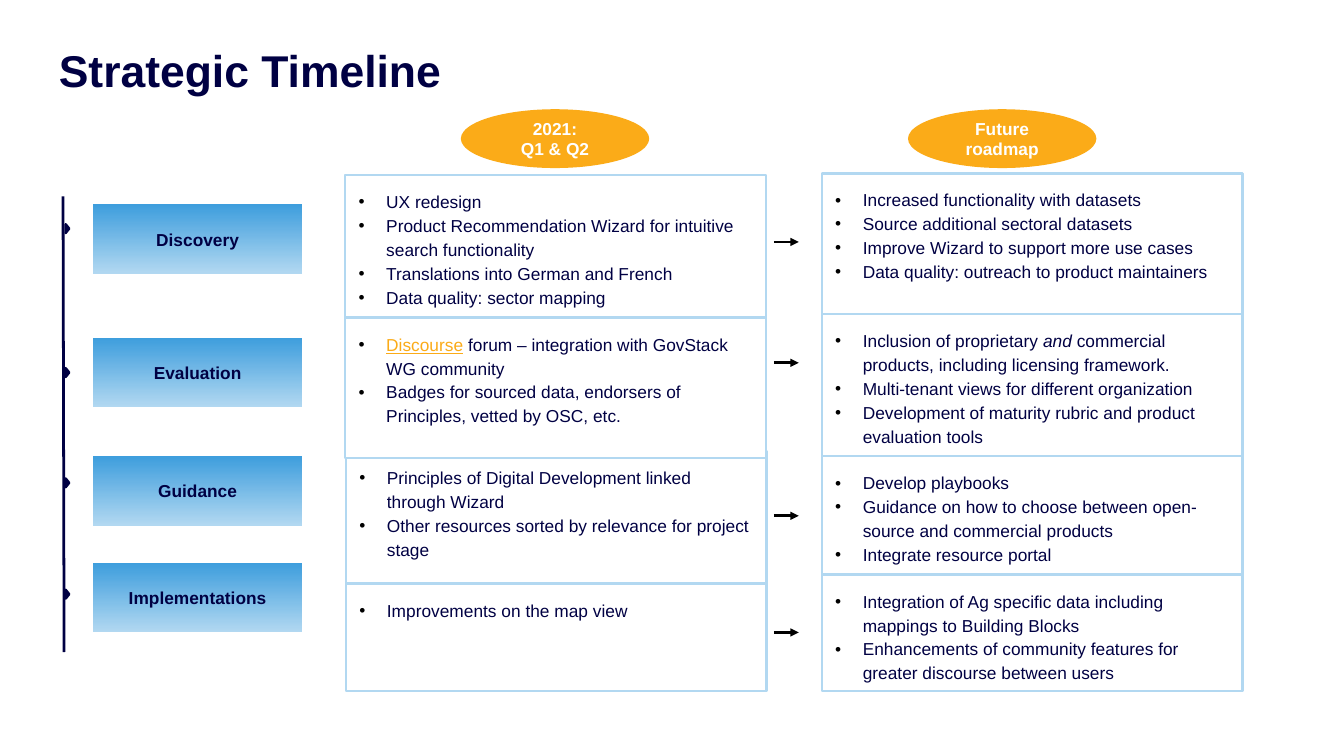
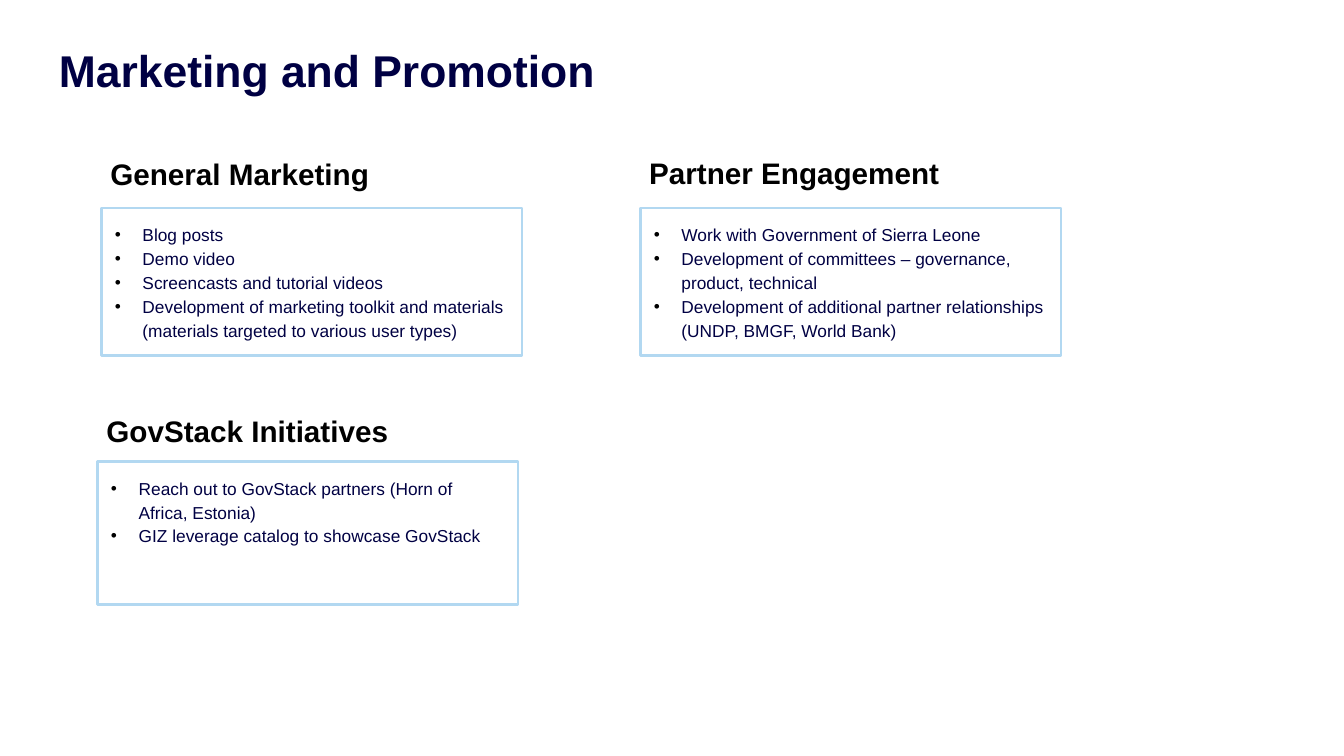
import lxml.etree
import pptx
import pptx.dml.color
import pptx.enum.shapes
import pptx.enum.text
import pptx.oxml.ns
import pptx.util

Cm = pptx.util.Cm
Pt = pptx.util.Pt
SHAPE = pptx.enum.shapes.MSO_SHAPE
ALIGN = pptx.enum.text.PP_ALIGN
ANCHOR = pptx.enum.text.MSO_ANCHOR
qn = pptx.oxml.ns.qn

COLOURS = {
    "navy": "000043",
    "black": "000000",
    "white": "FFFFFF",
    "orange": "FBAB18",
    "blue": "3E9EDD",
    "pale": "B2D8F1",
}
FONT = "Arial"
PANEL_WIDTH = 12.01
STAGE_LEFT, STAGE_WIDTH, STAGE_HEIGHT = 2.65, 5.99, 1.98
RAIL_LEFT, RAIL_TOP, RAIL_HEIGHT = 1.8, 5.61, 13.01
ARROW_LEFT, ARROW_LENGTH = 22.1, 0.71
OVAL_TOP, OVAL_WIDTH, OVAL_HEIGHT = 3.12, 5.38, 1.68

STAGES = [
    ("Discovery", 5.84),
    ("Evaluation", 9.65),
    ("Guidance", 13.03),
    ("Implementations", 16.08),
]
MARKER_TOPS = [6.48, 10.59, 13.74, 16.92]
ARROW_TOPS = [6.91, 10.36, 14.73, 18.06]

CURRENT_PANELS = [
    (9.86, 5, 4.22, [
        "UX redesign",
        "Product Recommendation Wizard for intuitive search functionality",
        "Translations into German and French",
        "Data quality: sector mapping",
    ]),
    (9.88, 12.88, 4.01, [
        "Principles of Digital Development linked through Wizard",
        "Other resources sorted by relevance for project stage",
    ]),
    (9.86, 9.07, 4.01, [
        [("Discourse", "link"), (" forum – integration with GovStack WG community", "plain")],
        "Badges for sourced data, endorsers of Principles, vetted by OSC, etc.",
    ]),
    (9.88, 16.66, 3.07, ["Improvements on the map view"]),
]
FUTURE_PANELS = [
    (23.47, 4.95, 4.09, [
        "Increased functionality with datasets",
        "Source additional sectoral datasets",
        "Improve Wizard to support more use cases",
        "Data quality: outreach to product maintainers",
    ]),
    (23.47, 8.97, 4.06, [
        [
            ("Inclusion of proprietary ", "plain"),
            ("and ", "italic"),
            ("commercial products, including licensing framework.", "plain"),
        ],
        "Multi-tenant views for different organization",
        "Development of maturity rubric and product evaluation tools",
    ]),
    (23.47, 13.03, 3.38, [
        "Develop playbooks",
        "Guidance on how to choose between open-source and commercial products",
        "Integrate resource portal",
    ]),
    (23.47, 16.41, 3.33, [
        "Integration of Ag specific data including mappings to Building Blocks",
        "Enhancements of community features for greater discourse between users",
    ]),
]
PERIODS = [
    ("2021:\vQ1 & Q2", 13.16, CURRENT_PANELS),
    ("Future\vroadmap", 25.93, FUTURE_PANELS),
]
CAMPAIGNS = [
    ("General Marketing", 2.9, 4.32, 1.62, 4.22, [
        "Blog posts",
        "Demo video",
        "Screencasts and tutorial videos",
        "Development of marketing toolkit and materials (materials targeted to various user types)",
    ]),
    ("GovStack Initiatives", 2.79, 11.68, 1.5, 4.09, [
        "Reach out to GovStack partners (Horn of Africa, Estonia)",
        "GIZ leverage catalog to showcase GovStack",
    ]),
    ("Partner Engagement", 18.29, 4.29, 1.65, 4.22, [
        "Work with Government of Sierra Leone",
        "Development of committees – governance, product, technical",
        "Development of additional partner relationships (UNDP, BMGF, World Bank)",
    ]),
]


def colour(name):
    return pptx.dml.color.RGBColor.from_string(COLOURS[name])


def style_para(para, size, ink, bold=False):
    para.font.name = FONT
    para.font.size = Pt(size)
    para.font.bold = bold
    para.font.color.rgb = colour(ink)


def set_insets(frame, inset):
    frame.margin_left = frame.margin_right = Cm(inset)
    frame.margin_top = frame.margin_bottom = Cm(inset)


def add_box(page, kind, left, top, width, height, fill=None, line=None):
    box = page.shapes.add_shape(kind, Cm(left), Cm(top), Cm(width), Cm(height))
    box.shadow.inherit = False
    if fill:
        box.fill.solid()
        box.fill.fore_color.rgb = colour(fill)
    if line:
        box.line.color.rgb = colour(line)
        box.line.width = Pt(2)
    else:
        box.line.fill.background()
    return box


def add_label(box, text, ink):
    frame = box.text_frame
    frame.word_wrap = True
    frame.vertical_anchor = ANCHOR.MIDDLE
    para = frame.paragraphs[0]
    para.text = text
    para.alignment = ALIGN.CENTER
    style_para(para, 14, ink, bold=True)


def add_line(page, left, top, right, bottom, ink):
    line = page.shapes.add_connector(
        pptx.enum.shapes.MSO_CONNECTOR.STRAIGHT, Cm(left), Cm(top), Cm(right), Cm(bottom)
    )
    line.line.color.rgb = colour(ink)
    line.line.width = Pt(2.25)
    lxml.etree.SubElement(line._element.spPr, qn("a:effectLst"))
    return line


def add_arrow(page, left, top, length):
    arrow = add_line(page, left, top, left + length, top, "black")
    lxml.etree.SubElement(arrow.line._get_or_add_ln(), qn("a:tailEnd"), type="triangle")


def add_bullet(para):
    properties = para._p.get_or_add_pPr()
    properties.set("marL", str(Cm(0.79)))
    properties.set("indent", str(-Cm(0.79)))
    bullet_colour = lxml.etree.SubElement(properties, qn("a:buClr"))
    lxml.etree.SubElement(bullet_colour, qn("a:srgbClr"), val=COLOURS["black"])
    lxml.etree.SubElement(properties, qn("a:buFont"), typeface=FONT)
    lxml.etree.SubElement(properties, qn("a:buChar"), char="•")


def add_spans(para, item):
    spans = [(item, "plain")] if isinstance(item, str) else item
    for text, look in spans:
        span = para.add_run()
        span.text = text
        if look == "italic":
            span.font.italic = True
        elif look == "link":
            span.font.underline = True
            span.font.color.rgb = colour("orange")


def add_panel(page, left, top, height, items):
    box = add_box(page, SHAPE.RECTANGLE, left, top, PANEL_WIDTH, height, "white", "pale")
    frame = box.text_frame
    frame.word_wrap = True
    frame.vertical_anchor = ANCHOR.TOP
    set_insets(frame, 0.38)
    for index, item in enumerate(items):
        para = frame.add_paragraph() if index else frame.paragraphs[0]
        para.alignment = ALIGN.LEFT
        para.line_spacing = 1.15
        add_bullet(para)
        style_para(para, 14, "navy")
        add_spans(para, item)


def add_rail(page, left, top, height):
    add_line(page, left, top, left + 0.03, top + height, "navy")
    for marker_top in MARKER_TOPS:
        marker = add_box(
            page, SHAPE.ISOSCELES_TRIANGLE, left, marker_top, 0.25, 0.1, "navy", "navy"
        )
        marker.rotation = 90


def add_stage(page, name, left, top):
    box = add_box(page, SHAPE.RECTANGLE, left, top, STAGE_WIDTH, STAGE_HEIGHT)
    box.fill.gradient()
    box.fill.gradient_angle = 270
    for stop, position, ink in zip(box.fill.gradient_stops, (0, 1), ("blue", "pale")):
        stop.position = position
        stop.color.rgb = colour(ink)
    add_label(box, name, "navy")


def add_period(page, name, left, panels):
    for panel in panels:
        add_panel(page, *panel)
    oval = add_box(page, SHAPE.OVAL, left, OVAL_TOP, OVAL_WIDTH, OVAL_HEIGHT, "orange")
    add_label(oval, name, "white")


def add_campaign(page, name, left, top, drop, height, items):
    heading = page.shapes.add_textbox(Cm(left), Cm(top), Cm(8.8), Cm(1.27))
    heading.text_frame.word_wrap = False
    para = heading.text_frame.paragraphs[0]
    para.text = name
    para.alignment = ALIGN.LEFT
    style_para(para, 24, "black", bold=True)
    add_panel(page, left, top + drop, height, items)


def add_page(deck, heading):
    page = deck.slides.add_slide(deck.slide_layouts[5])
    title = page.shapes.title
    title.left, title.top, title.width, title.height = Cm(1.68), Cm(1.14), Cm(34.9), Cm(1.98)
    frame = title.text_frame
    frame.word_wrap = True
    frame.vertical_anchor = ANCHOR.TOP
    set_insets(frame, 0)
    frame.margin_top = Cm(0.08)
    para = frame.paragraphs[0]
    para.text = heading
    para.alignment = ALIGN.LEFT
    style_para(para, 36, "navy", bold=True)
    return page


def build_timeline(deck):
    page = add_page(deck, "Strategic Timeline")
    add_rail(page, RAIL_LEFT, RAIL_TOP, RAIL_HEIGHT)
    for name, top in STAGES:
        add_stage(page, name, STAGE_LEFT, top)
    for period in PERIODS:
        add_period(page, *period)
    for top in ARROW_TOPS:
        add_arrow(page, ARROW_LEFT, top, ARROW_LENGTH)


def build_marketing(deck):
    page = add_page(deck, "Marketing and Promotion")
    for campaign in CAMPAIGNS:
        add_campaign(page, *campaign)


def main():
    deck = pptx.Presentation()
    deck.slide_width = Cm(38.38)
    deck.slide_height = Cm(21.59)
    build_timeline(deck)
    build_marketing(deck)
    deck.save("out.pptx")


if __name__ == "__main__":
    main()
